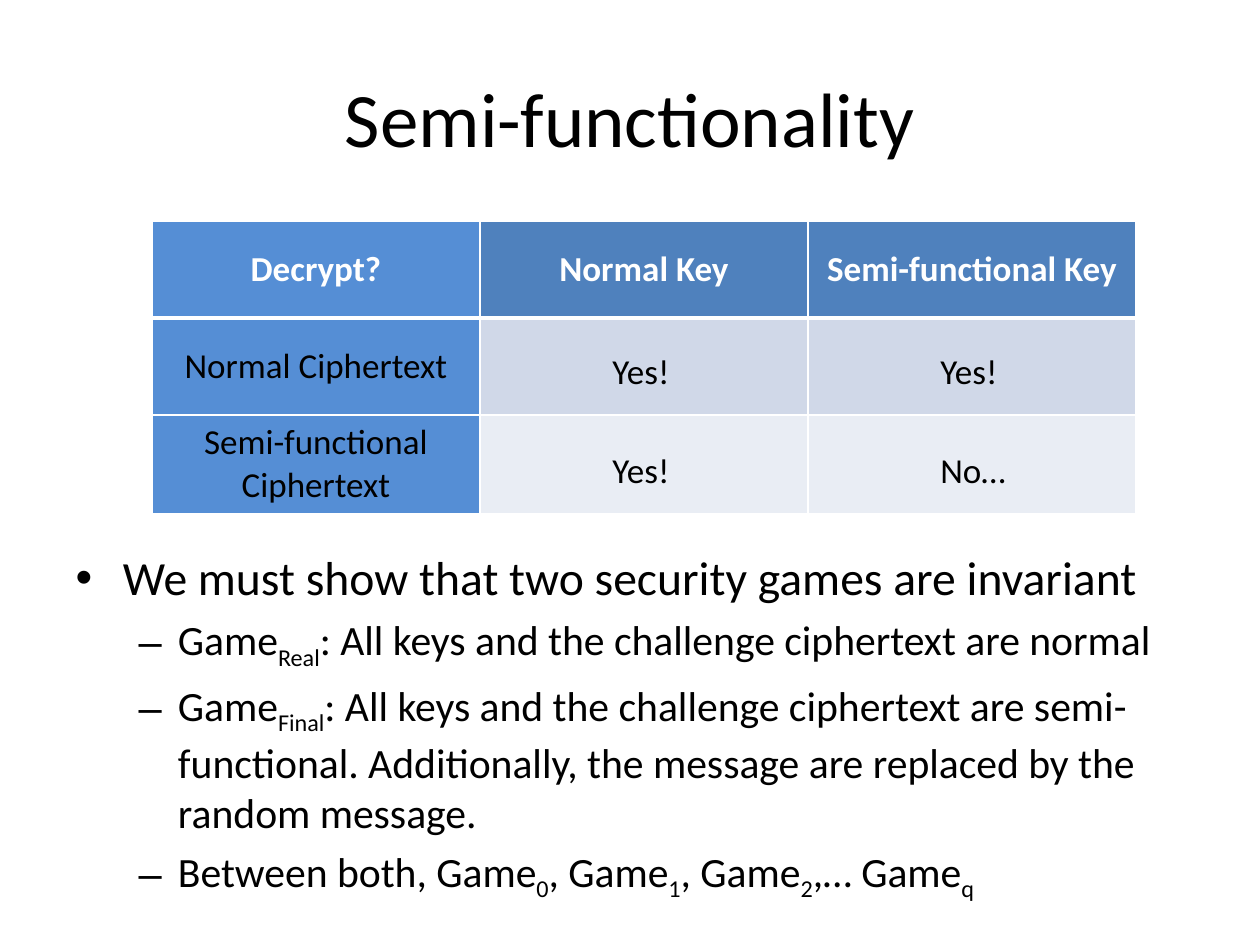
from lxml import etree
from pptx import Presentation
from pptx import util as u
from pptx.dml import color as dml
from pptx.enum import text as t
from pptx.oxml import ns

FONT = "Calibri"
BLACK, WHITE, BLUE = "000000", "FFFFFF", "558ED5"
HEADER, BAND_1, BAND_2 = "4F81BD", "D0D8E8", "E9EDF4"
TABLE_X, TABLE_Y, COL_W, ROW_H = 152, 221, 328, 97

ROWS = [
    (["Decrypt?", "Normal Key", "Semi-functional Key"], HEADER),
    (["Normal Ciphertext", "", ""], BAND_1),
    (["Semi-functional Ciphertext", "", ""], BAND_2),
]
ANSWERS = [["Yes!", "Yes!"], ["Yes!", "No…"]]

# Level, then text in which every second part between bars is a subscript
POINTS = [
    (0, "We must show that two security games are invariant"),
    (1, "Game|Real|: All keys and the challenge ciphertext are normal"),
    (1, "Game|Final|: All keys and the challenge ciphertext are semi-functional. "
        "Additionally, the message are replaced by the random message."),
    (1, "Between both, Game|0|, Game|1|, Game|2|,… Game|q|"),
]


def px(n):
    return u.Emu(round(n * 914400 / 126))


def rgb(value):
    return dml.RGBColor.from_string(value)


def place(sp, x, y, w, h):
    for name, value in dict(left=x, top=y, width=w, height=h).items():
        setattr(sp, name, px(value))


def add_run(p, content, size, color=BLACK, bold=False, sub=False):
    r = p.add_run()
    r.text = content
    for name, value in dict(name=FONT, size=u.Pt(size), bold=bold).items():
        setattr(r.font, name, value)
    r.font.color.rgb = rgb(color)
    if sub:
        r.font._element.set("baseline", "-25000")


def add_title(s, content):
    sp = s.shapes.title
    place(sp, 63, 38, 1134, 157)
    tf = sp.text_frame
    tf.vertical_anchor = t.MSO_ANCHOR.MIDDLE
    p = tf.paragraphs[0]
    p.alignment = t.PP_ALIGN.CENTER
    add_run(p, content, 44)


def add_points(s, points):
    sp = s.placeholders[1]
    place(sp, 63, 542, 1134, 302)
    tf = sp.text_frame
    tf.auto_size = t.MSO_AUTO_SIZE.NONE
    for i, (level, content) in enumerate(points):
        p = tf.add_paragraph() if i else tf.paragraphs[0]
        p.level = level
        p.space_before = u.Pt(5 if i else 0)
        for j, part in enumerate(content.split("|")):
            if part:
                add_run(p, part, 23.8 if level else 27.2, sub=j % 2 == 1)


def set_border(cell, side, width):
    ln = etree.SubElement(cell._tc.get_or_add_tcPr(), ns.qn(f"a:{side}"), w=str(u.Pt(width)))
    fill = etree.SubElement(ln, ns.qn("a:solidFill"))
    etree.SubElement(fill, ns.qn("a:srgbClr"), val=WHITE)


def fill_cell(cell, content, color, is_header, below_header):
    # Borders come before the fill in the cell properties
    for side in ("lnL", "lnR", "lnT", "lnB"):
        thick = (is_header and side == "lnB") or (below_header and side == "lnT")
        set_border(cell, side, 3 if thick else 1)
    cell.fill.solid()
    cell.fill.fore_color.rgb = rgb(color)
    cell.vertical_anchor = t.MSO_ANCHOR.MIDDLE
    p = cell.text_frame.paragraphs[0]
    p.alignment = t.PP_ALIGN.CENTER
    if content:
        add_run(p, content, 20, WHITE if is_header else BLACK, is_header)


def add_decrypt_table(s):
    n = len(ROWS)
    table = s.shapes.add_table(n, 3, px(TABLE_X), px(TABLE_Y), px(3 * COL_W), px(n * ROW_H)).table
    for column in table.columns:
        column.width = px(COL_W)
    for i, (contents, band) in enumerate(ROWS):
        table.rows[i].height = px(ROW_H)
        for j, content in enumerate(contents):
            fill_cell(table.cell(i, j), content, band if j else BLUE, i == 0, i == 1)


def add_answer(s, content, x, y):
    sp = s.shapes.add_textbox(px(x), px(y), px(159), px(55))
    tf = sp.text_frame
    tf.word_wrap = True
    tf.auto_size = t.MSO_AUTO_SIZE.SHAPE_TO_FIT_TEXT
    add_run(tf.paragraphs[0], content, 20)


def main():
    prs = Presentation()
    prs.slide_width, prs.slide_height = px(1260), px(945)
    s = prs.slides.add_slide(prs.slide_layouts[1])

    # Title and bullet list
    add_title(s, "Semi-functionality")
    add_points(s, POINTS)

    # Table with the answers laid over its cells
    add_decrypt_table(s)
    for i, answers in enumerate(ANSWERS):
        for j, answer in enumerate(answers, 1):
            add_answer(s, answer, TABLE_X + j * COL_W + 120, 343 + i * 99)

    prs.save("out.pptx")


if __name__ == "__main__":
    main()
